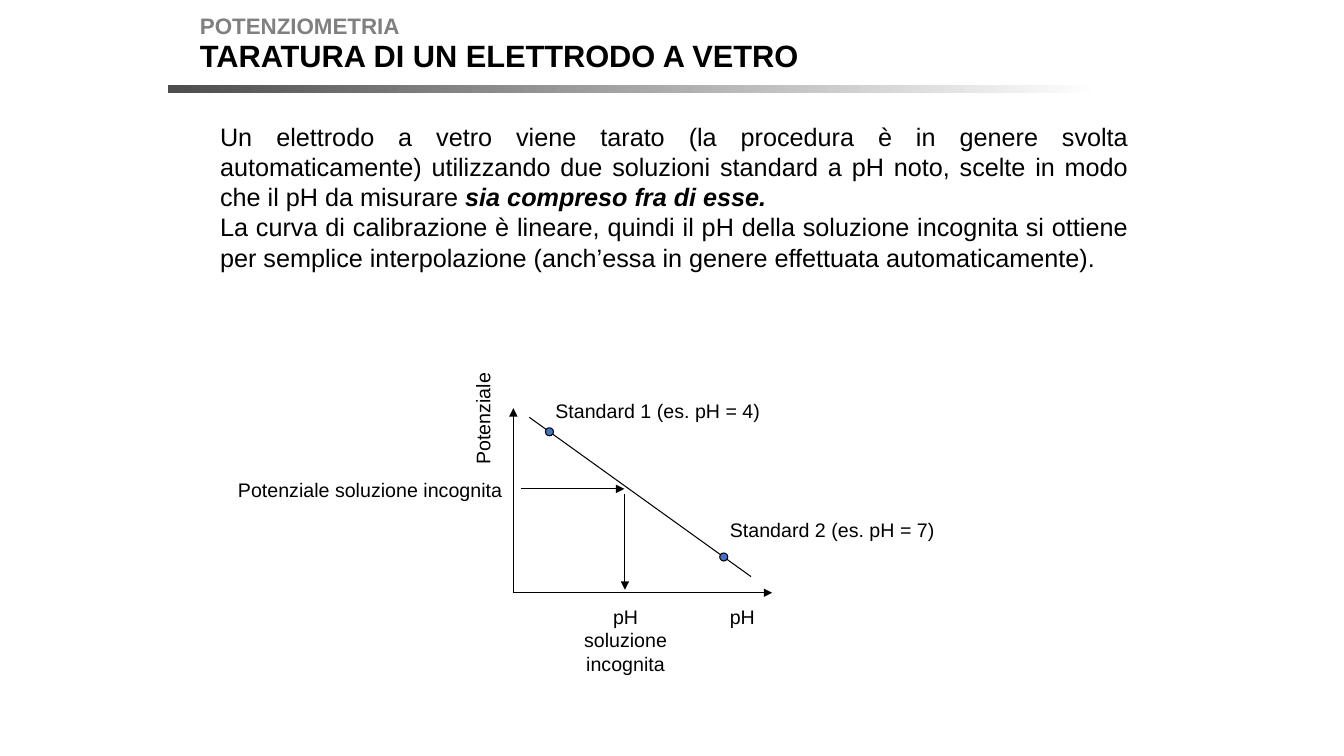
from pptx import Presentation, util as u
from pptx.dml.color import RGBColor
from pptx.enum import shapes, text
from pptx.oxml.ns import qn
from lxml import etree

BLACK = RGBColor(0x00, 0x00, 0x00)
GREY = RGBColor(0x80, 0x80, 0x80)
DARK = RGBColor(0x4D, 0x4D, 0x4D)
WHITE = RGBColor(0xFF, 0xFF, 0xFF)
BLUE = RGBColor(0x44, 0x72, 0xC4)

# The slide is a grid of 100 columns by 100 rows
WIDE, HIGH = u.Inches(13.33), u.Inches(7.5)
LEFT, BASE = 38.2, 78.4               # origin of the axes
START, END = (39.38, 55.2), (55.88, 76.27)  # calibration line
LINE_H = 4.27                         # height of a one-line label


def col(n):
    return round(WIDE * n / 100)


def row(n):
    return round(HIGH * n / 100)


def box(x, y, w, h):
    return col(x), row(y), col(w), row(h)


def place(shape, area):
    shape.left, shape.top, shape.width, shape.height = box(*area)


def style(shape, size, color=BLACK, bold=False, align=text.PP_ALIGN.LEFT, wrap=False):
    frame = shape.text_frame
    frame.word_wrap = wrap
    frame.auto_size = text.MSO_AUTO_SIZE.NONE
    frame.vertical_anchor = text.MSO_ANCHOR.TOP
    frame.margin_left = frame.margin_right = u.Inches(0.05)
    frame.margin_top = frame.margin_bottom = u.Inches(0.05)
    for para in frame.paragraphs:
        para.alignment = align
        para.space_before = u.Pt(0)
        for run in para.runs:
            font = run.font
            font.name, font.size, font.bold = "Arial", u.Pt(size), bold
            font.color.rgb = color


def label(slide, words, area, size=14, **look):
    shape = slide.shapes.add_textbox(*box(*area))
    shape.text_frame.text = words
    style(shape, size, **look)
    return shape


def line(slide, start, end, arrow=True):
    link = slide.shapes.add_connector(
        shapes.MSO_CONNECTOR.STRAIGHT,
        col(start[0]), row(start[1]), col(end[0]), row(end[1]))
    link.line.color.rgb = BLACK
    link.line.width = u.Pt(0.75)
    if arrow:
        edge = link.line._get_or_add_ln()
        etree.SubElement(edge, qn("a:tailEnd"), type="triangle")
    etree.SubElement(link._element.spPr, qn("a:effectLst"))


def dot(slide, x):
    """Mark a standard on the calibration line at column x."""
    slope = (END[1] - START[1]) / (END[0] - START[0])
    y = START[1] + slope * (x - START[0])
    size = u.Inches(0.08)
    mark = slide.shapes.add_shape(
        shapes.MSO_SHAPE.OVAL,
        col(x) - size // 2, row(y) - size // 2, size, size)
    mark.shadow.inherit = False
    mark.fill.solid()
    mark.fill.fore_color.rgb = BLUE
    mark.line.color.rgb = BLACK
    mark.line.width = u.Pt(0.75)


def header(slide):
    label(slide, "POTENZIOMETRIA", (14.5, 0.93, 15.75, 4.53), 16, color=GREY, bold=True)
    title = slide.shapes.title
    place(title, (14.5, 4.13, 45.45, 6))
    title.text_frame.text = "TARATURA DI UN ELETTRODO A VETRO"
    style(title, 22, bold=True)
    bar = slide.shapes.add_shape(shapes.MSO_SHAPE.RECTANGLE, *box(12.5, 11.2, 69.4, 1.07))
    bar.shadow.inherit = False
    bar.line.fill.background()
    bar.fill.gradient()
    bar.fill.gradient_angle = 0
    for stop, color in zip(bar.fill.gradient_stops, (DARK, WHITE)):
        stop.color.rgb = color


def body(slide):
    shape = slide.placeholders[1]
    place(shape, (16, 15.33, 68.33, 20.67))
    frame = shape.text_frame
    frame.text = (
        "Un elettrodo a vetro viene tarato (la procedura è in genere svolta "
        "automaticamente) utilizzando due soluzioni standard a pH noto, scelte "
        "in modo che il pH da misurare \n"
        "La curva di calibrazione è lineare, quindi il pH della soluzione "
        "incognita si ottiene per semplice interpolazione (anch’essa in genere "
        "effettuata automaticamente).")
    stress = frame.paragraphs[0].add_run()
    stress.text = "sia compreso fra di esse."
    style(shape, 18, align=text.PP_ALIGN.JUSTIFY, wrap=True)
    stress.font.bold = stress.font.italic = True
    for para in frame.paragraphs:
        props = para._p.get_or_add_pPr()
        props.set("marL", "0")
        props.set("indent", "0")
        etree.SubElement(props, qn("a:buNone"))


def graph(slide):
    # Axes
    line(slide, (LEFT, BASE), (57.45, BASE))
    line(slide, (LEFT, BASE), (LEFT, 54))
    label(slide, "pH", (53.93, 79.33, 2.7, LINE_H))
    label(slide, "Potenziale", (32.03, 53.2, 7.65, LINE_H)).rotation = 270

    # Calibration line and standards
    line(slide, START, END, arrow=False)
    for x in (40.88, 53.85):
        dot(slide, x)
    label(slide, "Standard 1 (es. pH = 4)", (40.95, 52.13, 16.05, LINE_H))
    label(slide, "Standard 2 (es. pH = 7)", (53.93, 67.87, 16.05, LINE_H))

    # Reading of the unknown solution
    line(slide, (38.78, 64.67), (46.45, 64.67))
    line(slide, (46.5, 65.33), (46.5, 78))
    label(slide, "Potenziale soluzione incognita", (17.33, 62.53, 20.48, LINE_H))
    label(slide, "pH soluzione incognita", (42.08, 79.33, 8.93, 10.13),
          align=text.PP_ALIGN.CENTER, wrap=True)


def main():
    deck = Presentation()
    deck.slide_width, deck.slide_height = WIDE, HIGH
    slide = deck.slides.add_slide(deck.slide_layouts[1])
    header(slide)
    body(slide)
    graph(slide)
    deck.save("out.pptx")


if __name__ == "__main__":
    main()
